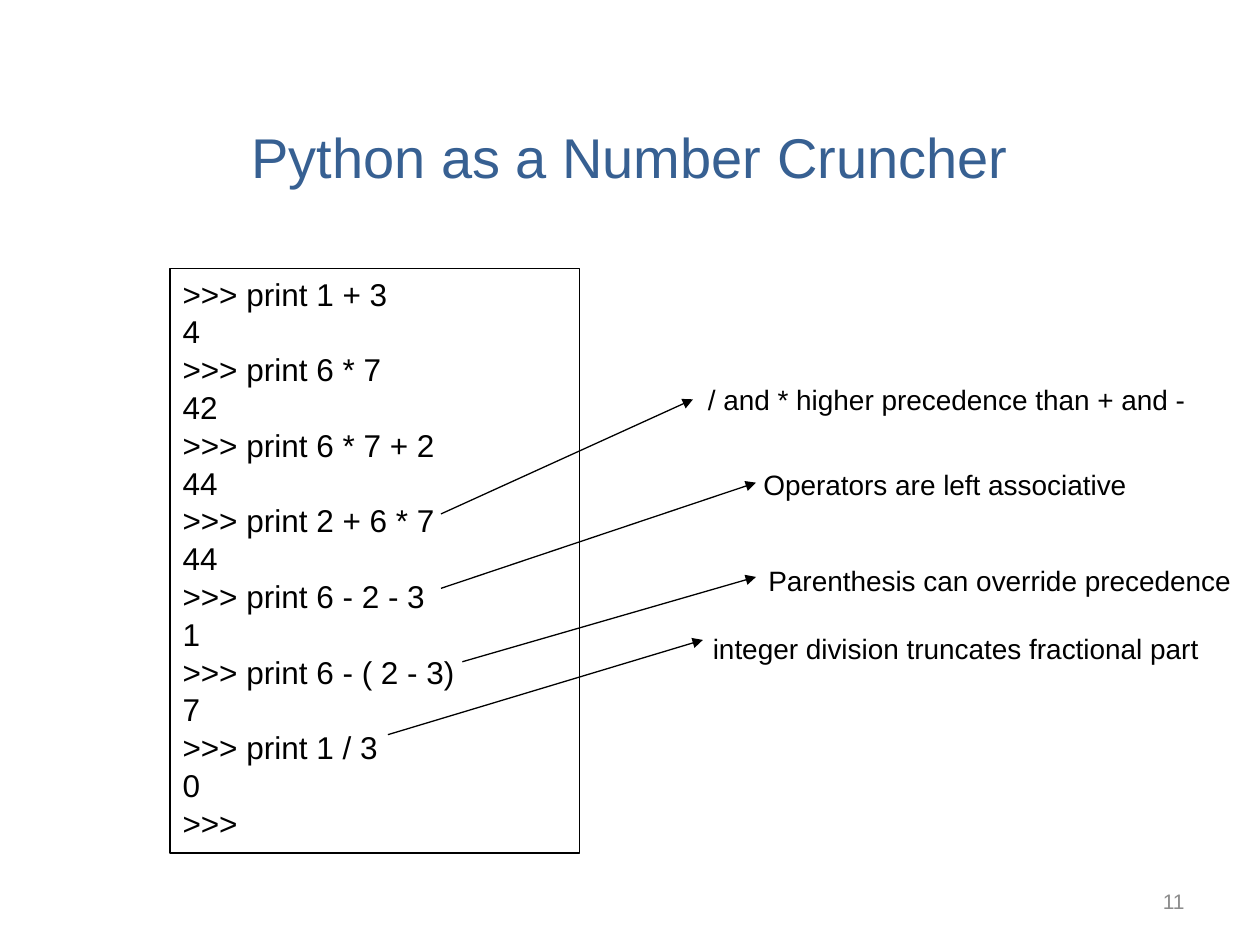
from pptx import Presentation
from pptx.dml.color import RGBColor
from pptx.enum.shapes import MSO_CONNECTOR, MSO_SHAPE
from pptx.enum.text import MSO_ANCHOR as ANCHOR, MSO_AUTO_SIZE as FIT, PP_ALIGN as ALIGN
from pptx.oxml.ns import qn
from pptx.util import Cm, Pt
from lxml.etree import SubElement

BLUE = RGBColor(0x37, 0x60, 0x92)
BLACK = RGBColor(0, 0, 0)
GRAY = RGBColor(0x8C, 0x8C, 0x8C)

SESSION = [
    (">>> print 1 + 3", "4"),
    (">>> print 6 * 7", "42"),
    (">>> print 6 * 7 + 2", "44"),
    (">>> print 2 + 6 * 7", "44"),
    (">>> print 6 - 2 - 3", "1"),
    (">>> print 6 - ( 2 - 3)", "7"),
    (">>> print 1 / 3", "0"),
]
NOTES = [
    ("/ and * higher precedence than + and -",
     (14.02, 7.59, 10.26, 0.94), (8.89, 10.36, 13.97, 8.05)),
    ("Operators are left associative",
     (15.14, 9.3, 7.92, 0.94), (8.89, 11.86, 15.24, 9.73)),
    ("Parenthesis can override precedence",
     (15.24, 11.23, 9.96, 0.94), (9.32, 13.34, 15.24, 11.63)),
    ("integer division truncates fractional part",
     (14.12, 12.6, 10.44, 0.94), (7.82, 14.81, 14.17, 12.9)),
]


def cm(values):
    """Convert a sequence of centimetres to lengths."""
    return [Cm(v) for v in values]


def write(sp, lines, size=16, color=BLACK, align=ALIGN.LEFT,
          anchor=ANCHOR.TOP, wrap=True, fit=FIT.NONE):
    """Write one paragraph per line into a shape."""
    tf = sp.text_frame
    tf.word_wrap, tf.auto_size, tf.vertical_anchor = wrap, fit, anchor
    for i, line in enumerate(lines):
        p = tf.paragraphs[0] if i == 0 else tf.add_paragraph()
        p.alignment = align
        r = p.add_run()
        r.text = line
        r.font.name, r.font.size, r.font.color.rgb = "Arial", Pt(size), color


def add_title(s, text):
    """Place and fill the title placeholder."""
    sp = s.shapes.title
    sp.left, sp.top, sp.width, sp.height = cm((1.27, 2.34, 22.86, 2.46))
    write(sp, [text], size=32, color=BLUE, align=ALIGN.CENTER)


def add_session(s):
    """Add the framed interpreter session."""
    sp = s.shapes.add_shape(MSO_SHAPE.RECTANGLE, *cm((3.43, 5.41, 8.26, 11.79)))
    sp.shadow.inherit = False
    sp.fill.background()
    sp.line.color.rgb, sp.line.width = BLACK, Pt(0.75)
    lines = [line for pair in SESSION for line in pair] + [">>>"]
    write(sp, lines, size=18, fit=FIT.SHAPE_TO_FIT_TEXT)


def add_arrow(s, ends):
    """Add a thin line with a triangle at its end."""
    c = s.shapes.add_connector(MSO_CONNECTOR.STRAIGHT, *cm(ends))
    c.line.color.rgb, c.line.width = BLACK, Pt(0.75)
    SubElement(c.line._get_or_add_ln(), qn("a:tailEnd"), type="triangle")
    SubElement(c._element.spPr, qn("a:effectLst"))


def add_text(s, text, box, **fmt):
    """Add a one-line text box."""
    write(s.shapes.add_textbox(*cm(box)), [text], **fmt)


def main():
    """Build the slide and save it."""
    prs = Presentation()
    prs.slide_width, prs.slide_height = cm((25.4, 19.05))
    s = prs.slides.add_slide(prs.slide_layouts[5])
    add_title(s, "Python as a Number Cruncher")
    add_text(s, "11", (18.21, 17.65, 5.92, 1.02), size=12, color=GRAY,
             align=ALIGN.RIGHT, anchor=ANCHOR.MIDDLE)
    add_session(s)
    for text, box, ends in NOTES:
        add_arrow(s, ends)
        add_text(s, text, box, wrap=False, fit=FIT.SHAPE_TO_FIT_TEXT)
    prs.save("out.pptx")


if __name__ == "__main__":
    main()
